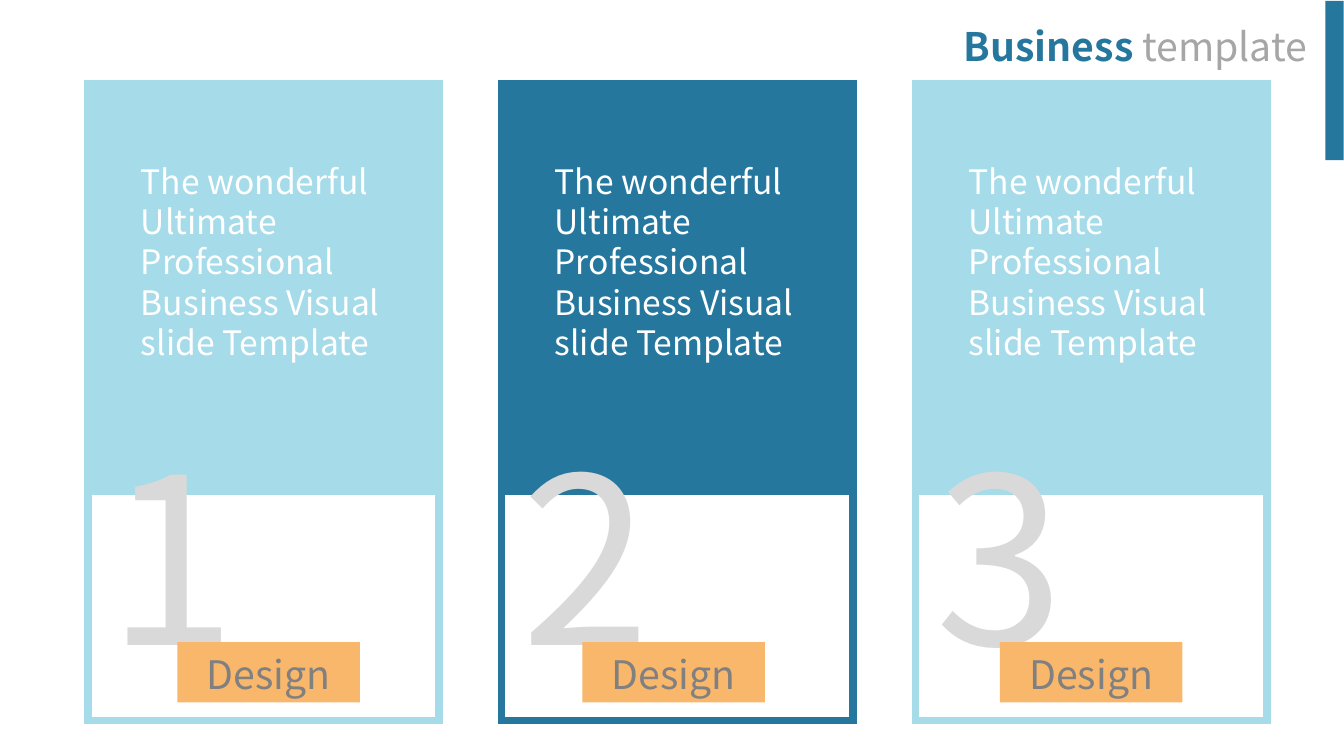
import lxml.etree
import pptx
import pptx.dml.color
import pptx.enum.shapes
import pptx.enum.text
import pptx.oxml.ns
import pptx.util

Cm = pptx.util.Cm
Pt = pptx.util.Pt
ALIGN = pptx.enum.text.PP_ALIGN

COLORS = {
    "blue": "26779E",
    "sky": "A6DBE9",
    "orange": "F8B76B",
    "white": "FFFFFF",
    "number": "D9D9D9",
    "label": "808080",
    "subtitle": "A6A6A6",
}
FONT = "Noto Sans CJK JP"
MESSAGE = "The wonderful Ultimate Professional Business Visual slide Template"
CARD_LEFT, CARD_PITCH, CARD_WIDTH = 2.21, 10.43, 8.86
CARDS = [("sky", 4.47), ("blue", 14.68), ("sky", 25.2)]  # frame color, tag left


def rgb(name):
    return pptx.dml.color.RGBColor.from_string(COLORS[name])


def add_text(paragraph, text, *, size, color, bold=False, align=ALIGN.LEFT):
    paragraph.alignment = align
    run = paragraph.add_run()
    run.text = text
    run.font.name = FONT
    run.font.size = Pt(size)
    run.font.bold = bold
    run.font.color.rgb = rgb(color)


def square_corners(rect):
    """Give the outline mitred joins."""
    outline = rect.element.spPr.find(pptx.oxml.ns.qn("a:ln"))
    miter = lxml.etree.SubElement(outline, pptx.oxml.ns.qn("a:miter"))
    miter.set("lim", "800000")


class SlideBuilder:
    """Adds styled elements to one slide; positions are in centimetres."""

    def __init__(self, slide):
        self.slide = slide

    def rectangle(self, left, top, width, height, fill, outline=None):
        rect = self.slide.shapes.add_shape(
            pptx.enum.shapes.MSO_SHAPE.RECTANGLE,
            Cm(left), Cm(top), Cm(width), Cm(height))
        rect.shadow.inherit = False
        rect.fill.solid()
        rect.fill.fore_color.rgb = rgb(fill)
        if outline:
            rect.line.color.rgb = rgb(outline)
            rect.line.width = Pt(5.5)
            square_corners(rect)
        else:
            rect.line.fill.background()
        return rect

    def text_box(self, left, top, width, height, wrap=False):
        """Return the first paragraph of a new text box."""
        frame = self.slide.shapes.add_textbox(
            Cm(left), Cm(top), Cm(width), Cm(height)).text_frame
        frame.word_wrap = wrap
        frame.auto_size = pptx.enum.text.MSO_AUTO_SIZE.SHAPE_TO_FIT_TEXT
        return frame.paragraphs[0]

    def tag(self, left, text):
        frame = self.rectangle(left, 16.18, 4.6, 1.52, "orange").text_frame
        frame.margin_top = Cm(0.2)
        frame.vertical_anchor = pptx.enum.text.MSO_ANCHOR.TOP
        frame.auto_size = pptx.enum.text.MSO_AUTO_SIZE.SHAPE_TO_FIT_TEXT
        add_text(frame.paragraphs[0], text, size=28, color="label",
                 align=ALIGN.CENTER)

    def card(self, left, number, color, tag_left):
        self.rectangle(left, 2.11, CARD_WIDTH, 10.21, color, color)
        self.rectangle(left, 12.37, CARD_WIDTH, 5.79, "white", color)
        add_text(self.text_box(left + 0.25, 10.29, 4.19, 7.34),
                 str(number), size=166, color="number")
        self.tag(tag_left, "Design")
        add_text(self.text_box(left + 1.09, 3.92, 6.71, 6.4, wrap=True),
                 MESSAGE, size=24, color="white")

    def title(self):
        heading = self.text_box(23.39, 0.43, 9.8, 1.45)
        add_text(heading, "Business ", size=28, color="blue", bold=True,
                 align=ALIGN.RIGHT)
        add_text(heading, "template", size=28, color="subtitle",
                 align=ALIGN.RIGHT)
        self.rectangle(33.4, 0.02, 0.46, 4.02, "blue")


def main():
    deck = pptx.Presentation()
    deck.slide_width, deck.slide_height = Cm(33.87), Cm(19.05)
    builder = SlideBuilder(deck.slides.add_slide(deck.slide_layouts[6]))
    for index, (color, tag_left) in enumerate(CARDS):
        builder.card(CARD_LEFT + index * CARD_PITCH, index + 1, color, tag_left)
    builder.title()
    deck.save("out.pptx")


if __name__ == "__main__":
    main()
